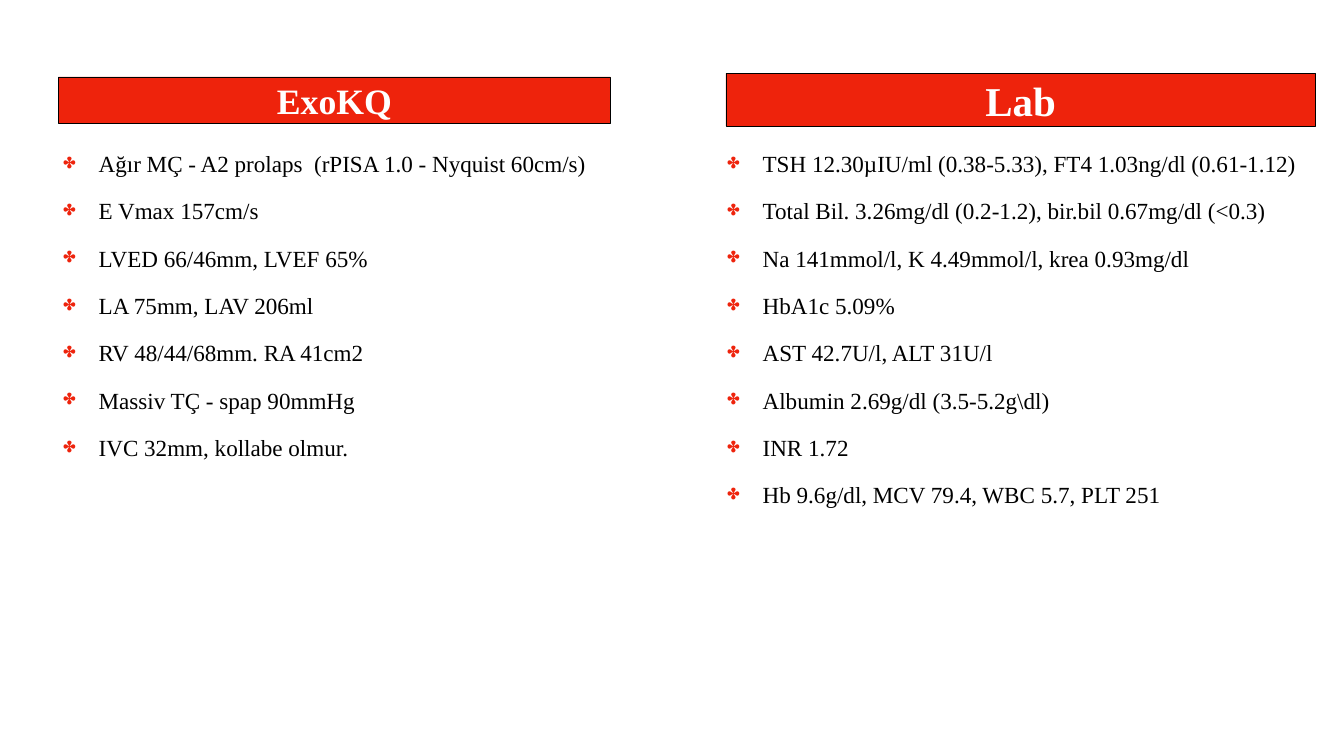
from dataclasses import dataclass

from lxml import etree
from pptx import Presentation
from pptx.dml.color import RGBColor
from pptx.enum.shapes import MSO_SHAPE
from pptx.enum.text import MSO_ANCHOR, PP_ALIGN
from pptx.oxml.ns import qn
from pptx.util import Pt

RECTANGLE = MSO_SHAPE.RECTANGLE
MIDDLE = MSO_ANCHOR.MIDDLE
TOP = MSO_ANCHOR.TOP
CENTER = PP_ALIGN.CENTER


@dataclass(frozen=True)
class Theme:
    accent: str = "EE230C"
    outline: str = "000000"
    body_text: str = "000000"
    heading_text: str = "FFFFFF"
    font: str = "Times New Roman"
    echo_heading_size: float = 51
    lab_heading_size: float = 58.5
    body_size: float = 33
    bullet: str = "✤"
    bullet_percent: int = 90
    indent: float = 50
    paragraph_gap: float = 28
    inset: float = 4


THEME = Theme()
LIST_TOP, LIST_HEIGHT = 209.5, 520.5

ECHO_FINDINGS = [
    "Ağır MÇ - A2 prolaps  (rPISA 1.0 - Nyquist 60cm/s)",
    "E Vmax 157cm/s",
    "LVED 66/46mm, LVEF 65%",
    "LA 75mm, LAV 206ml",
    "RV 48/44/68mm. RA 41cm2",
    "Massiv TÇ - spap 90mmHg",
    "IVC 32mm, kollabe olmur.",
]
LAB_RESULTS = [
    "TSH 12.30µIU/ml (0.38-5.33), FT4 1.03ng/dl (0.61-1.12)",
    "Total Bil. 3.26mg/dl (0.2-1.2), bir.bil 0.67mg/dl (<0.3)",
    "Na 141mmol/l, K 4.49mmol/l, krea 0.93mg/dl",
    "HbA1c 5.09%",
    "AST 42.7U/l, ALT 31U/l",
    "Albumin 2.69g/dl (3.5-5.2g\\dl)",
    "INR 1.72",
    "Hb 9.6g/dl, MCV 79.4, WBC 5.7, PLT 251",
]


def set_frame(text_frame, anchor):
    """Apply wrapping, equal insets and the vertical anchor."""
    text_frame.word_wrap = True
    text_frame.vertical_anchor = anchor
    text_frame.margin_left = text_frame.margin_right = Pt(THEME.inset)
    text_frame.margin_top = text_frame.margin_bottom = Pt(THEME.inset)


def format_runs(paragraph, size, color, bold=False):
    for run in paragraph.runs:
        run.font.name = THEME.font
        run.font.size = Pt(size)
        run.font.bold = bold
        run.font.color.rgb = RGBColor.from_string(color)


def add_bullet(paragraph):
    """Give the paragraph a coloured bullet with a hanging indent."""
    properties = paragraph._p.get_or_add_pPr()
    properties.set("marL", str(Pt(THEME.indent)))
    properties.set("indent", str(-Pt(THEME.indent)))
    color = etree.SubElement(properties, qn("a:buClr"))
    etree.SubElement(color, qn("a:srgbClr"), val=THEME.accent)
    etree.SubElement(properties, qn("a:buSzPct"), val=str(THEME.bullet_percent * 1000))
    etree.SubElement(properties, qn("a:buChar"), char=THEME.bullet)


def add_heading(slide, text, left, top, width, height, size):
    shape = slide.shapes.add_shape(RECTANGLE, Pt(left), Pt(top), Pt(width), Pt(height))
    shape.shadow.inherit = False
    shape.fill.solid()
    shape.fill.fore_color.rgb = RGBColor.from_string(THEME.accent)
    shape.line.color.rgb = RGBColor.from_string(THEME.outline)
    shape.line.width = Pt(1)
    set_frame(shape.text_frame, MIDDLE)
    shape.text_frame.text = text
    paragraph = shape.text_frame.paragraphs[0]
    paragraph.alignment = CENTER
    format_runs(paragraph, size, THEME.heading_text, bold=True)


def add_bullet_list(slide, items, left, width):
    box = slide.shapes.add_textbox(Pt(left), Pt(LIST_TOP), Pt(width), Pt(LIST_HEIGHT))
    set_frame(box.text_frame, TOP)
    box.text_frame.text = "\n".join(items)
    for index, paragraph in enumerate(box.text_frame.paragraphs):
        add_bullet(paragraph)
        paragraph.space_before = Pt(THEME.paragraph_gap if index else 0)
        format_runs(paragraph, THEME.body_size, THEME.body_text)


def main():
    presentation = Presentation()
    presentation.slide_width = Pt(1920)
    presentation.slide_height = Pt(1080)
    slide = presentation.slides.add_slide(presentation.slide_layouts[6])

    add_heading(slide, "ExoKQ", 83.5, 110, 788.5, 66, THEME.echo_heading_size)
    add_bullet_list(slide, ECHO_FINDINGS, 87, 780.5)
    add_heading(slide, "Lab", 1037, 105, 842.5, 75, THEME.lab_heading_size)
    add_bullet_list(slide, LAB_RESULTS, 1035.5, 845.5)

    presentation.save("out.pptx")


if __name__ == "__main__":
    main()
